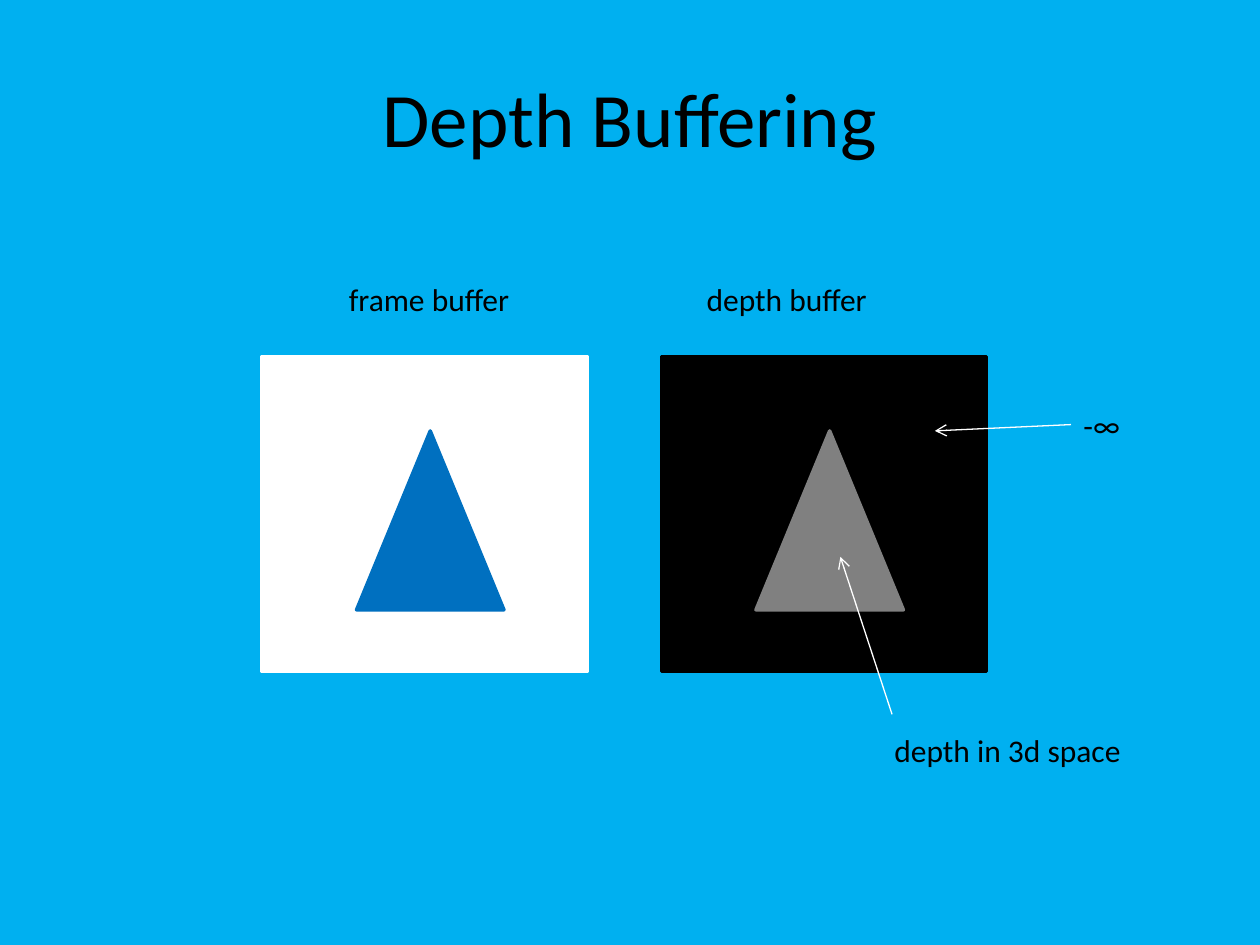
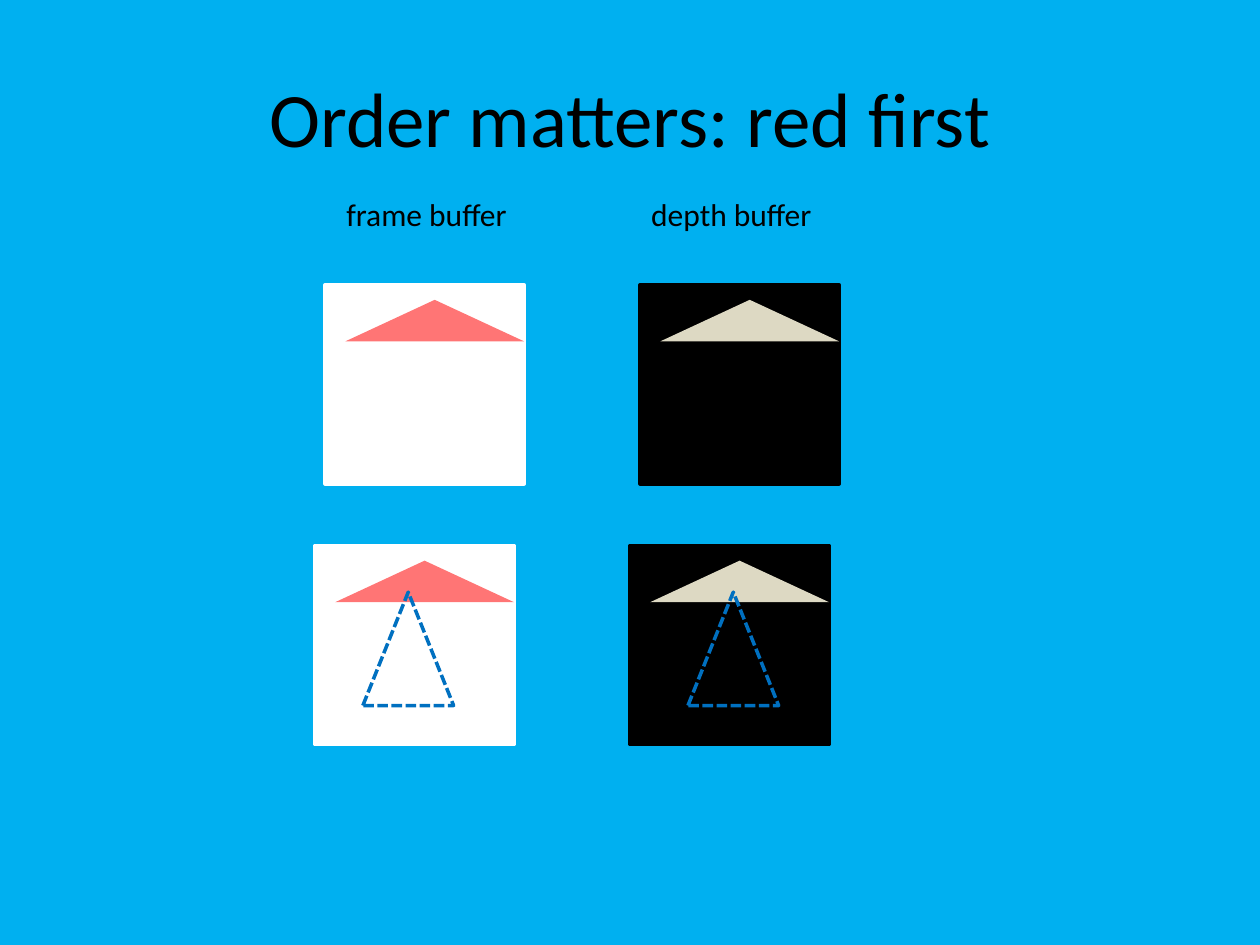
from pptx import Presentation
from pptx.dml.color import RGBColor
from pptx.enum.dml import MSO_LINE_DASH_STYLE as DASH
from pptx.enum.shapes import MSO_CONNECTOR, MSO_SHAPE
from pptx.enum.text import MSO_ANCHOR, MSO_AUTO_SIZE, PP_ALIGN
from pptx.oxml.ns import qn
from pptx.util import Inches, Pt
from lxml.etree import SubElement

COLORS = {
    "sky": "00B0F0",
    "text": "000000",
    "frame": "FFFFFF",
    "depth": "000000",
    "blue": "0070C0",
    "gray": "808080",
    "red": "FF0000",
    "beige": "DDD9C3",
    "arrow": "FFFFFF",
}
FONT = "Calibri"
RED_OPACITY = 54


def rgb(name):
    return RGBColor.from_string(COLORS[name])


def add_text(s, text, box, size=18):
    tb = s.shapes.add_textbox(*map(Inches, box))
    p = tb.text_frame.paragraphs[0]
    p.text = text
    p.font.name, p.font.size = FONT, Pt(size)
    p.font.color.rgb = rgb("text")
    return tb


def add_label(s, text, left, top, width=1.49):
    tb = add_text(s, text, (left, top, width, 0.4))
    tb.text_frame.word_wrap = False
    tb.text_frame.auto_size = MSO_AUTO_SIZE.SHAPE_TO_FIT_TEXT
    return tb


def add_slide(prs, title):
    s = prs.slides.add_slide(prs.slide_layouts[6])
    s.background.fill.solid()
    s.background.fill.fore_color.rgb = rgb("sky")
    tf = add_text(s, title, (0.5, 0.3, 9, 1.25), 44).text_frame
    tf.word_wrap = True
    tf.vertical_anchor = MSO_ANCHOR.MIDDLE
    tf.paragraphs[0].alignment = PP_ALIGN.CENTER
    return s


def add_figure(shapes, kind, box, fill=None, line=None, opacity=100, dash=None):
    sp = shapes.add_shape(kind, *map(Inches, box))
    sp.shadow.inherit = False
    if fill:
        sp.fill.solid()
        sp.fill.fore_color.rgb = rgb(fill)
    else:
        sp.fill.background()
    if opacity < 100:
        color = sp.fill._xPr.find(qn("a:solidFill"))[0]
        SubElement(color, qn("a:alpha"), val=str(opacity * 1000))
    if line:
        sp.line.color.rgb = rgb(line)
        sp.line.width = Pt(2)
        sp.line.dash_style = dash
    else:
        sp.line.fill.background()
    return sp


def add_arrow(s, start, end):
    c = s.shapes.add_connector(MSO_CONNECTOR.STRAIGHT, *map(Inches, start + end))
    c.line.color.rgb = rgb("arrow")
    c.line.width = Pt(0.75)
    SubElement(c.line._get_or_add_ln(), qn("a:tailEnd"), type="arrow")
    SubElement(c._element.spPr, qn("a:effectLst"))
    return c


def large_buffer(s, left, top, back, front):
    """Buffer with one triangle, as a group."""
    shapes = s.shapes.add_group_shape().shapes
    add_figure(shapes, MSO_SHAPE.RECTANGLE, (left, top, 2.58, 2.5), back, back)
    add_figure(shapes, MSO_SHAPE.ISOSCELES_TRIANGLE,
               (left + 0.75, top + 0.59, 1.17, 1.42), front, front)


def small_buffer(s, left, top, back, front, opacity=100, hidden_dx=None):
    """Buffer with a flat triangle and, optionally, a dashed hidden one."""
    add_figure(s.shapes, MSO_SHAPE.RECTANGLE, (left, top, 1.58, 1.58), back, back)
    add_figure(s.shapes, MSO_SHAPE.ISOSCELES_TRIANGLE,
               (left + 0.16, top + 0.12, 1.42, 0.33), front, opacity=opacity)
    if hidden_dx is not None:
        add_figure(s.shapes, MSO_SHAPE.ISOSCELES_TRIANGLE,
                   (left + hidden_dx, top + 0.37, 0.72, 0.9),
                   line="blue", dash=DASH.SQUARE_DOT)


def buffer_row(s, left, top, hidden=(None, None)):
    small_buffer(s, left, top, "frame", "red", RED_OPACITY, hidden[0])
    small_buffer(s, left + 2.5, top, "depth", "beige", hidden_dx=hidden[1])


def depth_buffering(prs):
    s = add_slide(prs, "Depth Buffering")
    add_label(s, "frame buffer", 2.67, 2.17)
    add_label(s, "depth buffer", 5.51, 2.17)
    large_buffer(s, 2.08, 2.83, "frame", "blue")
    large_buffer(s, 5.25, 2.83, "depth", "gray")

    # Depth values with their arrows
    infinity = add_label(s, "-∞", 8.5, 3.17, 0.49)
    add_arrow(s, (8.5, 3.37), (7.42, 3.42)).begin_connect(infinity, 1)
    add_label(s, "depth in 3d space", 7, 5.75, 2.02)
    add_arrow(s, (7.08, 5.67), (6.67, 4.42))


def order_matters(prs):
    s = add_slide(prs, "Order matters: red first")
    add_label(s, "frame buffer", 2.65, 1.5)
    add_label(s, "depth buffer", 5.07, 1.5)
    # Red alone, then the blue triangle on top of it
    buffer_row(s, 2.58, 2.26)
    buffer_row(s, 2.5, 4.33, hidden=(0.38, 0.46))


def main():
    prs = Presentation()
    prs.slide_width, prs.slide_height = Inches(10), Inches(7.5)
    depth_buffering(prs)
    order_matters(prs)
    prs.save("out.pptx")


if __name__ == "__main__":
    main()
